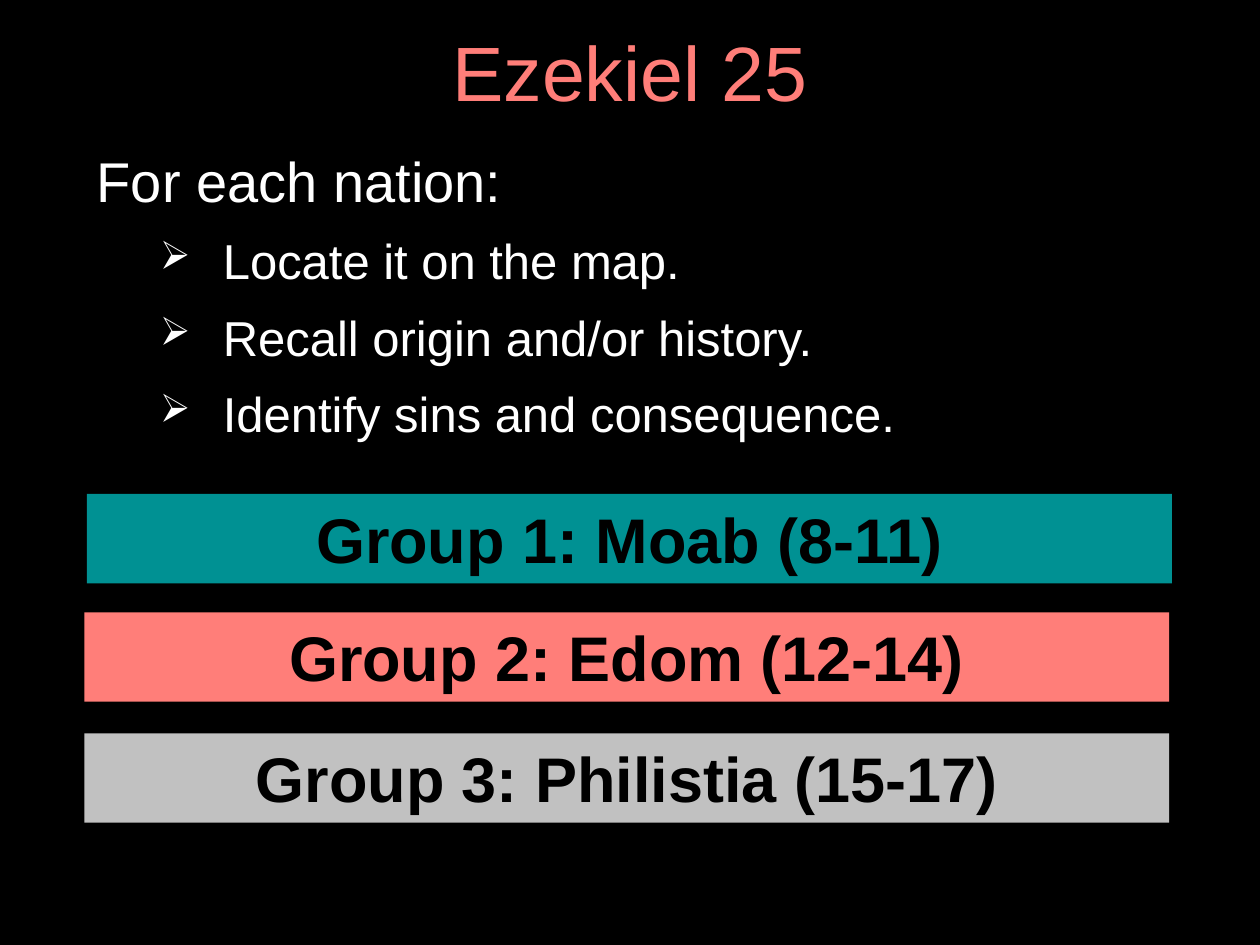
from lxml.etree import SubElement
from pptx import Presentation
from pptx.dml.color import RGBColor
from pptx.enum.shapes import MSO_SHAPE
from pptx.enum.text import MSO_ANCHOR, PP_ALIGN
from pptx.oxml.ns import qn
from pptx.util import Inches, Pt

BLACK = RGBColor(0x00, 0x00, 0x00)
WHITE = RGBColor(0xFF, 0xFF, 0xFF)
CORAL = RGBColor(0xFF, 0x7E, 0x79)
TEAL = RGBColor(0x00, 0x91, 0x93)
SILVER = RGBColor(0xC1, 0xC1, 0xC1)

TASKS = [
    "Locate it on the map.",
    "Recall origin and/or history.",
    "Identify sins and consequence.",
]
GROUPS = [
    ("Group 1: Moab (8-11)", 0.69, 3.92, TEAL),
    ("Group 2: Edom (12-14)", 0.67, 4.86, CORAL),
    ("Group 3: Philistia (15-17)", 0.67, 5.82, SILVER),
]


def write_text(paragraph, text, size, color, bold=False, align=PP_ALIGN.LEFT,
               line_spacing=None, before=None, after=None):
    paragraph.alignment = align
    paragraph.line_spacing = line_spacing
    paragraph.space_before = before
    paragraph.space_after = after
    run = paragraph.add_run()
    run.text = text
    run.font.name = "Arial"
    run.font.size = Pt(size)
    run.font.bold = bold
    run.font.color.rgb = color


def add_arrow_bullet(paragraph):
    properties = paragraph._p.get_or_add_pPr()
    properties.set("marL", str(Inches(1)))
    properties.set("indent", str(Inches(-0.5)))
    SubElement(properties, qn("a:buSzPct"), val="80000")
    SubElement(properties, qn("a:buChar"), char="➢")


def add_text_frame(slide, left, top, width, height):
    box = slide.shapes.add_textbox(
        Inches(left), Inches(top), Inches(width), Inches(height))
    box.text_frame.word_wrap = True
    return box.text_frame


def add_title(slide, text):
    frame = add_text_frame(slide, 0.69, 0.16, 8.62, 0.9)
    frame.vertical_anchor = MSO_ANCHOR.MIDDLE
    write_text(frame.paragraphs[0], text, 44, CORAL,
               align=PP_ALIGN.CENTER, line_spacing=0.9)


def add_task_list(slide, heading, tasks):
    frame = add_text_frame(slide, 0.67, 1.05, 8.62, 5.73)
    frame.margin_top = Inches(0.11)
    write_text(frame.paragraphs[0], heading, 32, WHITE, after=Pt(6))
    for task in tasks:
        paragraph = frame.add_paragraph()
        paragraph.level = 1
        add_arrow_bullet(paragraph)
        write_text(paragraph, task, 28, WHITE, before=Pt(4), after=Pt(6))


def add_group_bar(slide, text, left, top, color):
    bar = slide.shapes.add_shape(
        MSO_SHAPE.RECTANGLE, Inches(left), Inches(top), Inches(8.61), Inches(0.71))
    bar.shadow.inherit = False
    bar.fill.solid()
    bar.fill.fore_color.rgb = color
    bar.line.fill.background()
    frame = bar.text_frame
    frame.word_wrap = True
    frame.vertical_anchor = MSO_ANCHOR.TOP
    write_text(frame.paragraphs[0], text, 36, BLACK, bold=True, align=PP_ALIGN.CENTER)


def main():
    presentation = Presentation()
    presentation.slide_width = Inches(10)
    presentation.slide_height = Inches(7.5)
    slide = presentation.slides.add_slide(presentation.slide_layouts[6])
    slide.background.fill.solid()
    slide.background.fill.fore_color.rgb = BLACK
    add_title(slide, "Ezekiel 25")
    add_task_list(slide, "For each nation:", TASKS)
    for text, left, top, color in GROUPS:
        add_group_bar(slide, text, left, top, color)
    presentation.save("out.pptx")


if __name__ == "__main__":
    main()
